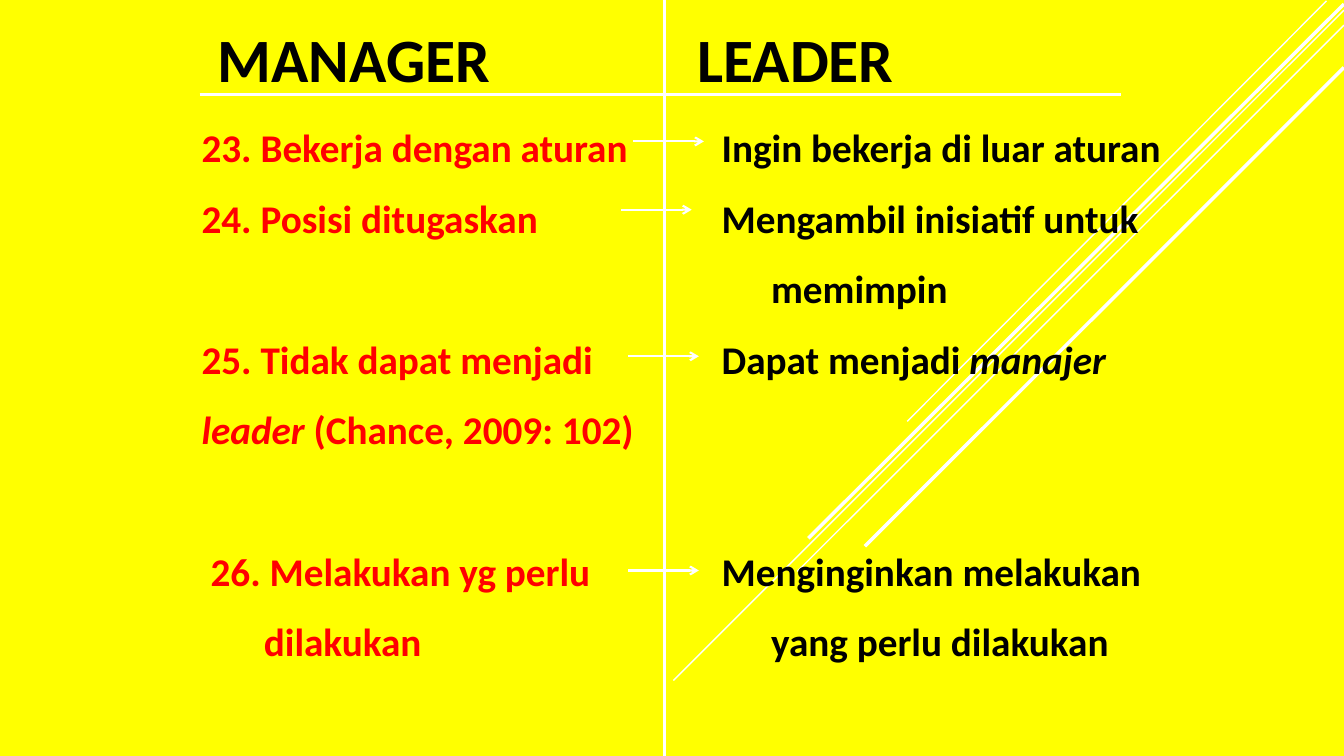
import pptx
import pptx.util
import pptx.dml.color
import pptx.enum.shapes
import pptx.enum.text
import pptx.oxml
from pptx.oxml.ns import qn

Pt = pptx.util.Pt
COLORS = {"background": "FFFF00", "line": "FFFFFF", "manager": "FF0000", "leader": "000000"}
LINE_HEIGHT = 50.4
COLUMN_TOP, COLUMN_WIDTH, COLUMN_HEIGHT = 67.7, 332, 409

DIAGONALS = [
    (947.5, 0.7, 648, 301, 1),
    (960, 7.2, 481, 486, 1),
    (960, 18, 569.5, 408.2, 1),
    (960, 2.9, 577.4, 384.5, 2.5),
    (960, 48.2, 617.8, 390.2, 2.5),
]
DIVIDERS = [(474.5, 0, 474.5, 540), (142.6, 67.7, 800.6, 67.7)]
ARROW_LENGTH = 50.6
ARROWS = [(452.2, 101), (443.5, 149.8), (448.6, 254.5), (448.6, 407.5)]

# Each item: runs as (text, italic), left margin, first-line indent, blank lines before
MANAGER_ITEMS = [
    ([("23. Bekerja dengan aturan", False)], 0, 0, 0),
    ([("24. Posisi ditugaskan", False)], 0, 0, 0),
    ([("25. Tidak dapat menjadi ", False), ("leader ", True), ("(Chance, 2009: 102)", False)], 0, 0, 1),
    ([("26. Melakukan yg perlu dilakukan", False)], 44.5, -38, 1),
]
LEADER_ITEMS = [
    ([("Ingin bekerja di luar aturan", False)], 35.3, -35.3, 0),
    ([("Mengambil inisiatif untuk memimpin", False)], 35.3, -35.3, 0),
    ([("Dapat menjadi ", False), ("manajer", True)], 35.3, -35.3, 0),
    ([("Menginginkan melakukan yang perlu dilakukan", False)], 35.3, -35.3, 2),
]


def rgb(name):
    return pptx.dml.color.RGBColor.from_string(COLORS[name])


def add_element(parent, tag, **attributes):
    element = pptx.oxml.parse_xml(
        f'<a:{tag} xmlns:a="http://schemas.openxmlformats.org/drawingml/2006/main"/>')
    for name, value in attributes.items():
        element.set(name, value)
    parent.append(element)
    return element


def add_line(slide, start_x, start_y, end_x, end_y, width):
    line = slide.shapes.add_connector(
        pptx.enum.shapes.MSO_CONNECTOR.STRAIGHT, Pt(start_x), Pt(start_y), Pt(end_x), Pt(end_y))
    line.line.color.rgb = rgb("line")
    line.line.width = Pt(width)
    add_element(line._element.spPr, "effectLst")
    return line


def add_arrow(slide, left, top):
    arrow = add_line(slide, left, top, left + ARROW_LENGTH, top, 1.5)
    add_element(arrow.line._get_or_add_ln(), "tailEnd", type="arrow")


def send_to_back(slide, shape):
    slide.shapes._spTree.insert(2, shape._element)


def place(placeholder, left, top, width, height):
    placeholder.left, placeholder.top = Pt(left), Pt(top)
    placeholder.width, placeholder.height = Pt(width), Pt(height)
    text_frame = placeholder.text_frame
    text_frame.word_wrap = True
    text_frame.auto_size = pptx.enum.text.MSO_AUTO_SIZE.NONE
    text_frame.vertical_anchor = pptx.enum.text.MSO_ANCHOR.TOP
    return text_frame


def format_paragraph(paragraph, margin, indent, line_spacing, space_before):
    paragraph.alignment = pptx.enum.text.PP_ALIGN.LEFT
    paragraph.line_spacing = line_spacing
    paragraph.space_before = Pt(space_before)
    paragraph.space_after = Pt(0)
    properties = paragraph._p.get_or_add_pPr()
    properties.set("marL", str(Pt(margin)))
    properties.set("indent", str(Pt(indent)))
    add_element(properties, "buNone")


def format_run(run, size, color, italic=False):
    run.font.name = "Calibri"
    run.font.size = Pt(size)
    run.font.bold = True
    run.font.italic = italic
    run.font.color.rgb = rgb(color)


def fill_heading(placeholder, text, left):
    text_frame = place(placeholder, left, 11.5, 242, 62)
    text_frame.text = text
    paragraph = text_frame.paragraphs[0]
    format_paragraph(paragraph, 0, 0, 1.0, 0)
    run = paragraph.runs[0]
    format_run(run, 44, "leader")
    properties = run._r.get_or_add_rPr()
    outline = add_element(properties, "ln", w=str(Pt(1)))
    add_element(add_element(outline, "solidFill"), "srgbClr", val=COLORS["line"])
    properties.insert(0, outline)


def fill_list(placeholder, items, left, color):
    text_frame = place(placeholder, left, COLUMN_TOP, COLUMN_WIDTH, COLUMN_HEIGHT)
    for index, (runs, margin, indent, blank_lines) in enumerate(items):
        paragraph = text_frame.add_paragraph() if index else text_frame.paragraphs[0]
        format_paragraph(paragraph, margin, indent, 1.5, blank_lines * LINE_HEIGHT)
        for text, italic in runs:
            run = paragraph.add_run()
            run.text = text
            format_run(run, 28, color, italic)


def main():
    presentation = pptx.Presentation()
    presentation.slide_width, presentation.slide_height = Pt(960), Pt(540)
    slide = presentation.slides.add_slide(presentation.slide_layouts.get_by_name("Comparison"))
    slide.background.fill.solid()
    slide.background.fill.fore_color.rgb = rgb("background")

    title = slide.shapes.title._element
    title.getparent().remove(title)
    placeholders = {shape.placeholder_format.idx: shape for shape in slide.placeholders}
    fill_heading(placeholders[1], "MANAGER", 148.3)
    fill_list(placeholders[2], MANAGER_ITEMS, 136.8, "manager")
    fill_heading(placeholders[3], "LEADER", 491)
    fill_list(placeholders[4], LEADER_ITEMS, 508.3, "leader")

    for diagonal in DIAGONALS:
        send_to_back(slide, add_line(slide, *diagonal))
    for divider in DIVIDERS:
        add_line(slide, *divider, 2.25)
    for arrow in ARROWS:
        add_arrow(slide, *arrow)
    presentation.save("out.pptx")


if __name__ == "__main__":
    main()
